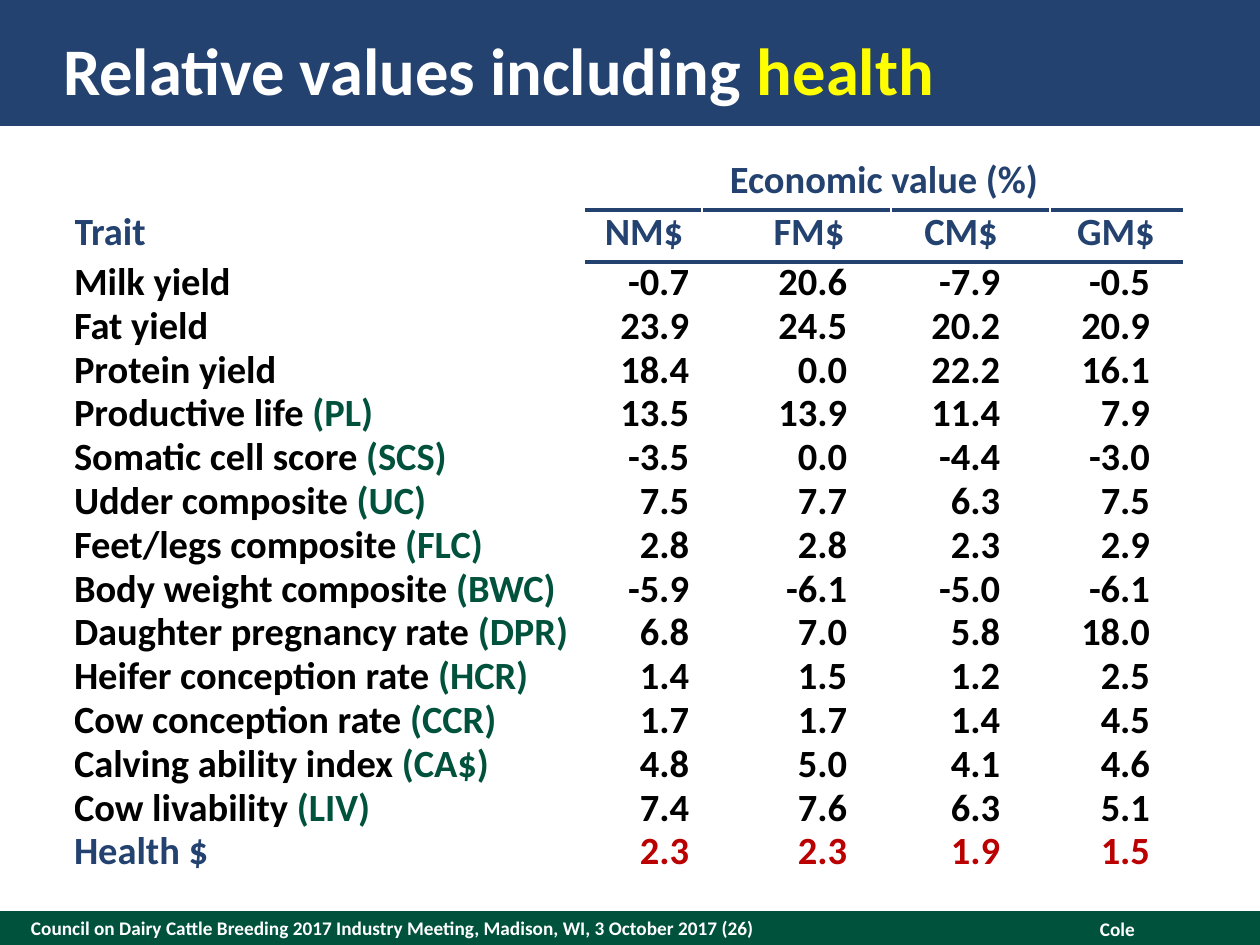
from typing import NamedTuple

from lxml.etree import SubElement
from pptx import Presentation
from pptx.dml.color import RGBColor
from pptx.enum.shapes import MSO_SHAPE
from pptx.enum.text import MSO_ANCHOR, PP_ALIGN
from pptx.oxml import parse_xml
from pptx.oxml.ns import nsdecls
from pptx.util import Emu, Pt

PX_PER_INCH = 126
FONT = "Calibri"
NAVY = RGBColor(0x24, 0x42, 0x70)
GREEN = RGBColor(0x00, 0x52, 0x3C)
RED = RGBColor(0xBA, 0x00, 0x00)
YELLOW = RGBColor(0xFF, 0xFF, 0x00)
WHITE = RGBColor(0xFF, 0xFF, 0xFF)
BLACK = RGBColor(0x00, 0x00, 0x00)


class Box(NamedTuple):
    left: int
    top: int
    width: int
    height: int


class Insets(NamedTuple):
    left: int = 0
    top: int = 0
    right: int = 0
    bottom: int = 0


class Index(NamedTuple):
    name: str
    width: int
    header_insets: Insets
    value_insets: Insets


class Trait(NamedTuple):
    name: str
    abbreviation: str
    values: str
    name_color: RGBColor = BLACK
    value_color: RGBColor = BLACK


TRAIT_WIDTH = 512
INDEXES = [
    Index("NM$", 116, Insets(0, 6, 0, 6), Insets(right=13)),
    Index("FM$", 189, Insets(25, 6, 0, 6), Insets(left=13, right=44)),
    Index("CM$", 159, Insets(0, 6, 19, 6), Insets(right=50)),
    Index("GM$", 132, Insets(0, 6, 0, 6), Insets(right=32)),
]
TRAITS = [
    Trait("Milk yield", "", "-0.7 20.6 -7.9 -0.5"),
    Trait("Fat yield", "", "23.9 24.5 20.2 20.9"),
    Trait("Protein yield", "", "18.4 0.0 22.2 16.1"),
    Trait("Productive life", "PL", "13.5 13.9 11.4 7.9"),
    Trait("Somatic cell score", "SCS", "-3.5 0.0 -4.4 -3.0"),
    Trait("Udder composite", "UC", "7.5 7.7 6.3 7.5"),
    Trait("Feet/legs composite", "FLC", "2.8 2.8 2.3 2.9"),
    Trait("Body weight composite", "BWC", "-5.9 -6.1 -5.0 -6.1"),
    Trait("Daughter pregnancy rate", "DPR", "6.8 7.0 5.8 18.0"),
    Trait("Heifer conception rate", "HCR", "1.4 1.5 1.2 2.5"),
    Trait("Cow conception rate", "CCR", "1.7 1.7 1.4 4.5"),
    Trait("Calving ability index", "CA$", "4.8 5.0 4.1 4.6"),
    Trait("Cow livability", "LIV", "7.4 7.6 6.3 5.1"),
    Trait("Health $", "", "2.3 2.3 1.9 1.5", NAVY, RED),
]
HEADER_HEIGHTS = [48, 52]
TRAIT_HEIGHT = 43  # the 25 pt line spacing stretches each row slightly


def px(length: int) -> Emu:
    return Emu(round(length * 914400 / PX_PER_INCH))


def write(holder, *runs, size=22, align=PP_ALIGN.LEFT, line=None,
          insets=Insets(), anchor=MSO_ANCHOR.TOP) -> None:
    """Write (text, colour) runs into a shape or a table cell."""
    frame = holder.text_frame
    target = frame if hasattr(holder, "shape_id") else holder
    for side, inset in insets._asdict().items():
        setattr(target, f"margin_{side}", px(inset))
    target.vertical_anchor = anchor
    frame.word_wrap = True
    paragraph = frame.paragraphs[0]
    paragraph.alignment = align
    if line:
        paragraph.line_spacing = Pt(line)
    for text, color in runs:
        run = paragraph.add_run()
        run.text = text
        run.font.name = FONT
        run.font.size = Pt(size)
        run.font.bold = True
        run.font.color.rgb = color


def add_band(slide, box: Box, color: RGBColor) -> None:
    band = slide.shapes.add_shape(MSO_SHAPE.RECTANGLE, *map(px, box))
    band.shadow.inherit = False
    band.fill.solid()
    band.fill.fore_color.rgb = color
    band.line.fill.background()


def add_label(slide, box: Box, text: str, **text_format) -> None:
    label = slide.shapes.add_textbox(*map(px, box))
    write(label, (text, WHITE), size=11, **text_format)


def set_rule(cell, side: str) -> None:
    """Draw a navy border on one side ("lnT" or "lnB") of a cell."""
    border = parse_xml(f'<a:{side} {nsdecls("a")} w="{Pt(2.25)}"/>')
    fill = SubElement(border, border.tag.replace(side, "solidFill"))
    SubElement(fill, border.tag.replace(side, "srgbClr")).set("val", str(NAVY))
    cell._tc.get_or_add_tcPr().insert(0, border)


def add_value_table(slide) -> None:
    widths = [TRAIT_WIDTH, *(index.width for index in INDEXES)]
    heights = HEADER_HEIGHTS + [TRAIT_HEIGHT] * len(TRAITS)
    box = Box(74, 162, sum(widths), sum(heights))
    table = slide.shapes.add_table(len(heights), len(widths), *map(px, box)).table
    table.first_row = table.horz_banding = False
    for column, width in zip(table.columns, widths):
        column.width = px(width)
    for row, height in zip(table.rows, heights):
        row.height = px(height)
    for cell in table.iter_cells():
        cell.fill.background()

    # Headings, with the rule under the spanning one
    table.cell(0, 0).merge(table.cell(1, 0))
    table.cell(0, 1).merge(table.cell(0, len(INDEXES)))
    heading = dict(line=24, insets=Insets(bottom=6), anchor=MSO_ANCHOR.BOTTOM)
    write(table.cell(0, 0), ("Trait", NAVY), **heading)
    write(table.cell(0, 1), ("Economic value (%)", NAVY),
          align=PP_ALIGN.CENTER, **heading)
    for column, index in enumerate(INDEXES, 1):
        set_rule(table.cell(0, column), "lnB")
        set_rule(table.cell(1, column), "lnT")
        write(table.cell(1, column), (index.name, NAVY), line=22,
              align=PP_ALIGN.CENTER, insets=index.header_insets,
              anchor=MSO_ANCHOR.BOTTOM)

    # One row for each trait
    for row, trait in enumerate(TRAITS, len(HEADER_HEIGHTS)):
        name_runs = [(trait.name, trait.name_color)]
        if trait.abbreviation:
            name_runs.append((f" ({trait.abbreviation})", GREEN))
        write(table.cell(row, 0), *name_runs, line=25)
        for column, (index, value) in enumerate(zip(INDEXES, trait.values.split()), 1):
            write(table.cell(row, column), (value, trait.value_color), line=25,
                  align=PP_ALIGN.RIGHT, insets=index.value_insets)


def main() -> None:
    presentation = Presentation()
    presentation.slide_width, presentation.slide_height = px(1260), px(945)
    slide = presentation.slides.add_slide(presentation.slide_layouts[5])
    title = slide.shapes.title

    # Bands and footer
    add_band(slide, Box(0, 911, 1260, 34), GREEN)
    add_band(slide, Box(0, 0, 1260, 126), NAVY)
    add_label(slide, Box(31, 911, 882, 34),
              "Council on Dairy Cattle Breeding 2017 Industry Meeting, "
              "Madison, WI, 3 October 2017 (26)", anchor=MSO_ANCHOR.MIDDLE)
    add_label(slide, Box(896, 911, 252, 36), "Cole", align=PP_ALIGN.RIGHT,
              insets=Insets(13, 6, 13, 6))

    # Title, moved in front of its band
    slide.shapes._spTree.append(title._element)
    title.left, title.top, title.width, title.height = map(px, Box(63, 25, 1167, 88))
    write(title, ("Relative values including ", WHITE), ("health", YELLOW),
          size=38, anchor=MSO_ANCHOR.MIDDLE)

    add_value_table(slide)
    presentation.save("out.pptx")


if __name__ == "__main__":
    main()
